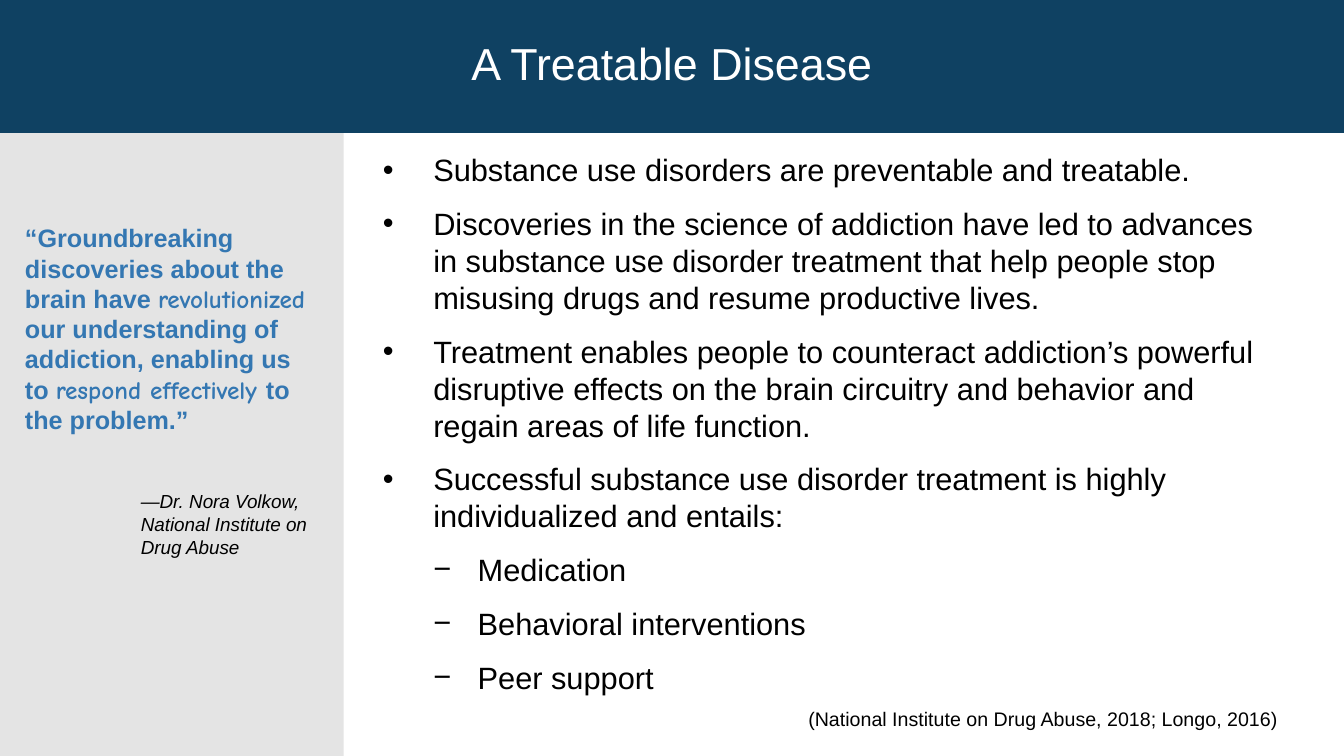
import pptx
import pptx.util
import pptx.dml.color
import pptx.enum.shapes
import pptx.enum.text
import pptx.oxml.ns
import lxml.etree

Cm, Pt = pptx.util.Cm, pptx.util.Pt
WIDTH, HEIGHT = 33.87, 19.05
BANNER_HEIGHT, PANEL_WIDTH = 3.33, 8.66

QUOTE = [
    ("“Groundbreaking discoveries about the brain have ", "Arial"),
    ("revolutionized", "Comic Neue"),
    (" our understanding of addiction, enabling us to ", "Arial"),
    ("respond effectively ", "Comic Neue"),
    ("to the problem.”", "Arial"),
]
POINTS = [
    (0, "Substance use disorders are preventable and treatable."),
    (0, "Discoveries in the science of addiction have led to advances in substance use "
        "disorder treatment that help people stop misusing drugs and resume productive lives."),
    (0, "Treatment enables people to counteract addiction’s powerful disruptive effects on "
        "the brain circuitry and behavior and regain areas of life function."),
    (0, "Successful substance use disorder treatment is highly individualized and entails:"),
    (1, "Medication"),
    (1, "Behavioral interventions"),
    (1, "Peer support"),
]
# level: (bullet, left margin, hanging indent), in cm
BULLETS = {0: ("•", 1.27, 1.27), 1: ("−", 2.39, 1.12)}


def rgb(color):
    return pptx.dml.color.RGBColor.from_string(color)


def add_child(parent, tag, **attrs):
    return lxml.etree.SubElement(parent, pptx.oxml.ns.qn(tag), attrs)


def add_run(p, text, color, **formats):
    r = p.add_run()
    r.text = text
    r.font.color.rgb = rgb(color)
    for name, value in {"name": "Arial", **formats}.items():
        setattr(r.font, name, value)


def add_rect(s, box, color):
    rect = s.shapes.add_shape(pptx.enum.shapes.MSO_SHAPE.RECTANGLE, *map(Cm, box))
    rect.shadow.inherit = False
    rect.fill.solid()
    rect.fill.fore_color.rgb = rgb(color)
    return rect


def add_text(s, box, grow=True):
    tf = s.shapes.add_textbox(*map(Cm, box)).text_frame
    tf.word_wrap = True
    if grow:
        tf.auto_size = pptx.enum.text.MSO_AUTO_SIZE.SHAPE_TO_FIT_TEXT
    return tf


def add_points(s, box):
    tf = add_text(s, box, grow=False)
    for i, (level, text) in enumerate(POINTS):
        p = tf.paragraphs[0] if i == 0 else tf.add_paragraph()
        p.level = level
        p.space_before = Pt(6 if i else 0)
        p.space_after = Pt(6)
        bullet, margin, hanging = BULLETS[level]
        pPr = p._p.get_or_add_pPr()
        pPr.set("marL", str(Cm(margin)))
        pPr.set("indent", str(-Cm(hanging)))
        add_child(pPr, "a:buFont", typeface="Arial")
        add_child(pPr, "a:buChar", char=bullet)
        add_run(p, text, "000000", size=Pt(22))


def add_quote_panel(s, box):
    left, top, width, height = box
    panel = add_rect(s, box, "DBDBDB")
    panel.line.fill.background()
    color = panel._element.spPr.find(".//" + pptx.oxml.ns.qn("a:srgbClr"))
    add_child(color, "a:alpha", val="74000")

    source = add_text(s, (left + 3.3, top + 8.89, 4.8, 1.98))
    add_run(source.paragraphs[0], "—Dr. Nora Volkow, National Institute on Drug Abuse",
            "000000", size=Pt(13.5), italic=True)

    quote = add_text(s, (left + 0.38, top + 2.16, width - 1.01, 6.4))
    for text, font in QUOTE:
        add_run(quote.paragraphs[0], text, "3477B2", name=font, size=Pt(18), bold=True)


def add_banner(s, box):
    banner = add_rect(s, box, "0F4162")
    banner.line.color.rgb = rgb("0F4162")
    banner.line.width = Pt(1)
    tf = banner.text_frame
    tf.vertical_anchor = pptx.enum.text.MSO_ANCHOR.MIDDLE
    p = tf.paragraphs[0]
    p.alignment = pptx.enum.text.PP_ALIGN.CENTER
    p.line_spacing = 0.9
    add_run(p, "A Treatable Disease", "FFFFFF", size=Pt(32))


def add_citation(s, box):
    p = add_text(s, box).paragraphs[0]
    add_run(p, "(National Institute on Drug Abuse, 2018; Longo, 2016)", "000000", size=Pt(14))


def main():
    prs = pptx.Presentation()
    prs.slide_width, prs.slide_height = Cm(WIDTH), Cm(HEIGHT)
    s = prs.slides.add_slide(prs.slide_layouts[6])
    add_points(s, (PANEL_WIDTH + 0.74, BANNER_HEIGHT + 0.35, 22.94, 14.25))
    add_quote_panel(s, (0, BANNER_HEIGHT, PANEL_WIDTH, HEIGHT - BANNER_HEIGHT))
    add_banner(s, (0, 0, WIDTH, BANNER_HEIGHT))
    add_citation(s, (20.12, 17.7, 13.67, 0.86))
    prs.save("out.pptx")


if __name__ == "__main__":
    main()
